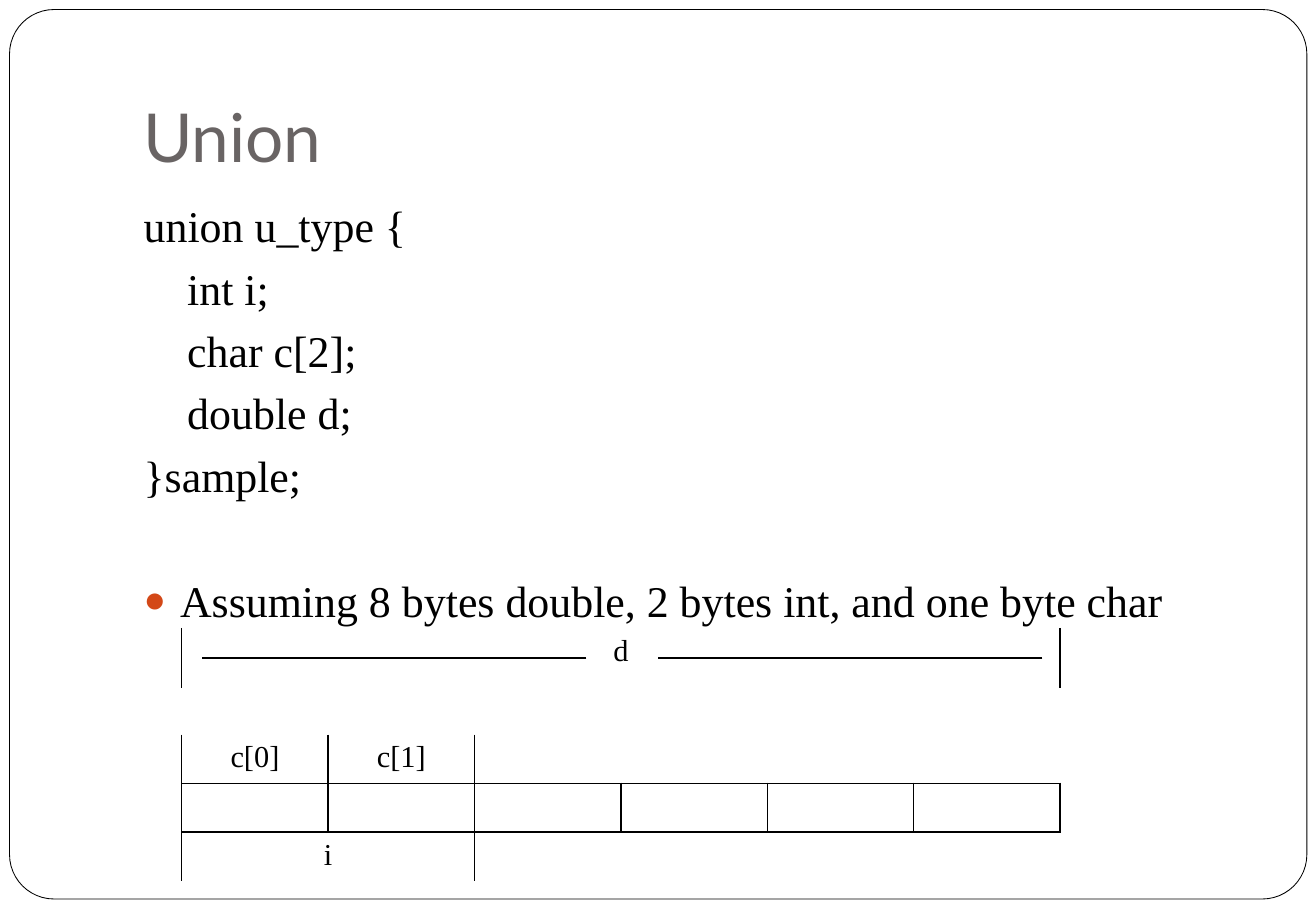
"""Build the slide that explains the memory layout of a C union."""
from dataclasses import dataclass

from lxml import etree
from pptx import Presentation
from pptx import util as u
from pptx.dml.color import RGBColor
from pptx.enum import shapes, text
from pptx.oxml.ns import qn


@dataclass(frozen=True)
class Theme:
    ink: str = "000000"
    paper: str = "FFFFFF"
    heading: str = "696464"
    accent: str = "D34817"
    heading_font: str = "Lato"
    body_font: str = "Times New Roman"
    heading_size: int = 40
    body_size: int = 26
    label_size: int = 18
    frame_width: float = 0.5
    border_width: float = 1
    rule_width: float = 1.5


@dataclass(frozen=True)
class Line:
    words: str
    margin: float = 0
    before: float = 5.8
    bullet: bool = False


@dataclass(frozen=True)
class Field:
    row: int
    column: int
    span: int
    sides: str = ""
    label: str = ""


THEME = Theme()
BYTE_COLUMNS = 6
BYTE_WIDTH = 3.06
ROW_HEIGHTS = (1.25, 0.98, 1.02, 1.02, 1.02)
MEMORY_LEFT, MEMORY_TOP = 3.8, 13.13
RULE_Y, RULE_LENGTH = 13.76, 8.03
RULE_STARTS = (4.23, 13.76)

LINES = (
    Line("union u_type {"),
    Line("int i;", margin=0.91),
    Line("char c[2];", margin=0.91),
    Line("double d;", margin=0.91),
    Line("}sample;"),
    Line("Assuming 8 bytes double, 2 bytes int, and one byte char",
         margin=0.76, before=43, bullet=True),
)

FIELDS = (
    Field(0, 0, 6, "LR", "d"),
    Field(1, 0, 6),
    Field(2, 0, 1, "LRB", "c[0]"),
    Field(2, 1, 1, "LRB", "c[1]"),
    Field(2, 2, 4, "LB"),
    *(Field(3, byte, 1, "LRTB") for byte in range(BYTE_COLUMNS)),
    Field(4, 0, 2, "LRT", "i"),
    Field(4, 2, 4, "LT"),
)


def apply(target, values: dict) -> None:
    for name, value in values.items():
        setattr(target, name, value)


def place(holder, left: float, top: float, width: float, height: float) -> None:
    apply(holder, {"left": u.Cm(left), "top": u.Cm(top),
                   "width": u.Cm(width), "height": u.Cm(height)})


def write(paragraph, words: str, font: str, size: int, colour: str) -> None:
    run = paragraph.add_run()
    run.text = words
    apply(run.font, {"name": font, "size": u.Pt(size), "bold": False})
    run.font.color.rgb = RGBColor.from_string(colour)


def draw_frame(slide) -> None:
    frame = slide.shapes.add_shape(shapes.MSO_SHAPE.ROUNDED_RECTANGLE,
                                   u.Cm(0.2), u.Cm(0.2), u.Cm(27.12), u.Cm(18.6))
    frame.adjustments[0] = 0.05
    frame.shadow.inherit = False
    frame.fill.solid()
    frame.fill.fore_color.rgb = RGBColor.from_string(THEME.paper)
    frame.line.color.rgb = RGBColor.from_string(THEME.ink)
    frame.line.width = u.Pt(THEME.frame_width)
    slide.shapes._spTree.insert(2, frame._element)


def write_heading(heading) -> None:
    place(heading, 2.74, 0.76, 23.39, 3.18)
    apply(heading.text_frame, {"vertical_anchor": text.MSO_ANCHOR.BOTTOM,
                               "margin_bottom": u.Cm(0.25),
                               "auto_size": text.MSO_AUTO_SIZE.NONE})
    paragraph = heading.text_frame.paragraphs[0]
    paragraph.alignment = text.PP_ALIGN.LEFT
    write(paragraph, "Union", THEME.heading_font, THEME.heading_size, THEME.heading)


def set_bullet(paragraph, line: Line) -> None:
    properties = paragraph._p.get_or_add_pPr()
    margin = u.Cm(line.margin)
    properties.set("marL", str(margin))
    properties.set("indent", str(-margin if line.bullet else 0))
    if not line.bullet:
        etree.SubElement(properties, qn("a:buNone"))
        return
    colour = etree.SubElement(properties, qn("a:buClr"))
    etree.SubElement(colour, qn("a:srgbClr"), val=THEME.accent)
    etree.SubElement(properties, qn("a:buSzPct"), val="85000")
    etree.SubElement(properties, qn("a:buChar"), char="●")


def write_code(code) -> None:
    place(code, 2.75, 4.03, 23.39, 12.7)
    frame = code.text_frame
    frame.auto_size = text.MSO_AUTO_SIZE.NONE
    for index, line in enumerate(LINES):
        paragraph = frame.add_paragraph() if index else frame.paragraphs[0]
        apply(paragraph, {"space_before": u.Pt(line.before),
                          "alignment": text.PP_ALIGN.LEFT})
        set_bullet(paragraph, line)
        write(paragraph, line.words, THEME.body_font, THEME.body_size, THEME.ink)


def set_borders(cell, sides: str) -> None:
    properties = cell._tc.get_or_add_tcPr()
    for side in sides:
        border = etree.SubElement(properties, qn(f"a:ln{side}"),
                                  w=str(u.Pt(THEME.border_width)))
        fill = etree.SubElement(border, qn("a:solidFill"))
        etree.SubElement(fill, qn("a:srgbClr"), val=THEME.ink)


def draw_memory(slide) -> None:
    memory = slide.shapes.add_table(
        len(ROW_HEIGHTS), BYTE_COLUMNS, u.Cm(MEMORY_LEFT), u.Cm(MEMORY_TOP),
        u.Cm(BYTE_WIDTH * BYTE_COLUMNS), u.Cm(sum(ROW_HEIGHTS))).table
    apply(memory, {"first_row": False, "horz_banding": False})
    style = memory._tbl.tblPr.find(qn("a:tableStyleId"))
    style.text = "{2D5ABB26-0587-4C30-8999-92F81FD0307C}"
    for column in memory.columns:
        column.width = u.Cm(BYTE_WIDTH)
    for row, height in zip(memory.rows, ROW_HEIGHTS):
        row.height = u.Cm(height)
    for field in FIELDS:
        cell = memory.cell(field.row, field.column)
        if field.span > 1:
            cell.merge(memory.cell(field.row, field.column + field.span - 1))
        set_borders(cell, field.sides)
        if field.label:
            paragraph = cell.text_frame.paragraphs[0]
            paragraph.alignment = text.PP_ALIGN.CENTER
            write(paragraph, field.label, THEME.body_font, THEME.label_size, THEME.ink)
    for cell in memory.iter_cells():
        cell.fill.background()
        if not cell.text:
            apply(cell, {"margin_top": 0, "margin_bottom": 0})


def draw_rule(slide, start: float) -> None:
    rule = slide.shapes.add_connector(
        shapes.MSO_CONNECTOR.STRAIGHT, u.Cm(start + RULE_LENGTH), u.Cm(RULE_Y),
        u.Cm(start), u.Cm(RULE_Y))
    rule.line.color.rgb = RGBColor.from_string(THEME.ink)
    rule.line.width = u.Pt(THEME.rule_width)
    etree.SubElement(rule._element.spPr, qn("a:effectLst"))


def main() -> None:
    deck = Presentation()
    apply(deck, {"slide_width": u.Cm(27.51), "slide_height": u.Cm(19.05)})
    slide = deck.slides.add_slide(deck.slide_layouts[1])
    draw_frame(slide)
    write_heading(slide.shapes.title)
    write_code(slide.placeholders[1])
    draw_memory(slide)
    for start in RULE_STARTS:
        draw_rule(slide, start)
    deck.save("out.pptx")


if __name__ == "__main__":
    main()
